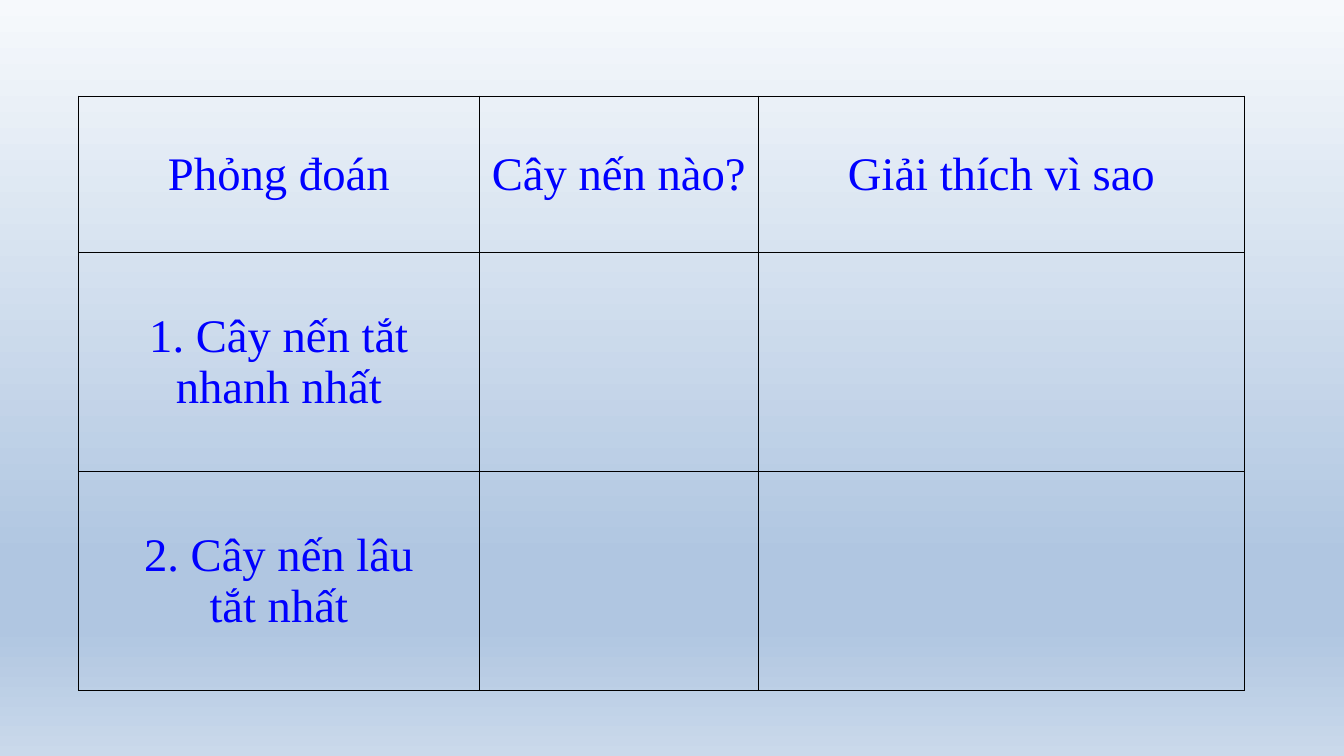
from pptx import Presentation
from pptx.dml.color import RGBColor as RGB
from pptx.enum.text import MSO_ANCHOR as Anchor, PP_ALIGN as Align
from pptx.oxml.ns import qn
from pptx.util import Inches, Pt
from lxml.etree import SubElement as Sub

WIDTH, HEIGHT = 20, 11.25
COLORS = {"text": "0000FF", "border": "000000"}
SKY_STOPS = [(0, "F6F9FC"), (74, "B0C6E1"), (83, "B0C6E1"), (100, "CAD9EB")]

# Table grid, in inches
LEFT, TOP = 1.17, 1.43
COLUMNS = [5.96, 4.16, 7.23]
ROWS = [2.33, 3.26, 3.26]
GUESSES = [
    ["Phỏng đoán", "Cây nến nào?", "Giải thích vì sao"],
    ["1. Cây nến tắt nhanh nhất", "", ""],
    ["2. Cây nến lâu\vtắt nhất", "", ""],
]

CELL_FORMAT = {
    "vertical_anchor": Anchor.MIDDLE,
    "margin_left": Inches(0.15),
    "margin_right": Inches(0.15),
    "margin_top": Inches(0.07),
    "margin_bottom": Inches(0.07),
}
FONT_FORMAT = {"name": "Times New Roman", "size": Pt(50)}


def apply_format(target, values):
    for attribute, value in values.items():
        setattr(target, attribute, value)


def add_color(parent, color):
    Sub(parent, qn("a:srgbClr"), val=color)


def paint_background(slide):
    sky = slide.background.fill
    sky.gradient()
    sky.gradient_angle = 270  # top to bottom
    stops = slide.element.find(".//" + qn("a:gsLst"))
    for stop in list(stops):
        stops.remove(stop)
    for percent, color in SKY_STOPS:
        add_color(Sub(stops, qn("a:gs"), pos=str(percent * 1000)), color)


def add_borders(cell):
    properties = cell._tc.get_or_add_tcPr()
    for side in "LRTB":
        line = Sub(properties, qn(f"a:ln{side}"), w=str(Pt(1)))
        add_color(Sub(line, qn("a:solidFill")), COLORS["border"])


def fill_cell(cell, words):
    apply_format(cell, CELL_FORMAT)
    add_borders(cell)
    cell.fill.background()
    cell.text = words
    paragraph = cell.text_frame.paragraphs[0]
    paragraph.alignment = Align.CENTER
    for run in paragraph.runs:
        apply_format(run.font, FONT_FORMAT)
        run.font.color.rgb = RGB.from_string(COLORS["text"])


def add_guess_table(slide):
    bounds = map(Inches, (LEFT, TOP, sum(COLUMNS), sum(ROWS)))
    table = slide.shapes.add_table(len(ROWS), len(COLUMNS), *bounds).table
    apply_format(table, {"first_row": False, "horz_banding": False})
    for column, width in zip(table.columns, COLUMNS):
        column.width = Inches(width)
    for row, height, guess in zip(table.rows, ROWS, GUESSES):
        row.height = Inches(height)
        for cell, words in zip(row.cells, guess):
            fill_cell(cell, words)


def main():
    deck = Presentation()
    apply_format(deck, {"slide_width": Inches(WIDTH), "slide_height": Inches(HEIGHT)})
    slide = deck.slides.add_slide(deck.slide_layouts[6])
    paint_background(slide)
    add_guess_table(slide)
    deck.save("out.pptx")


if __name__ == "__main__":
    main()
